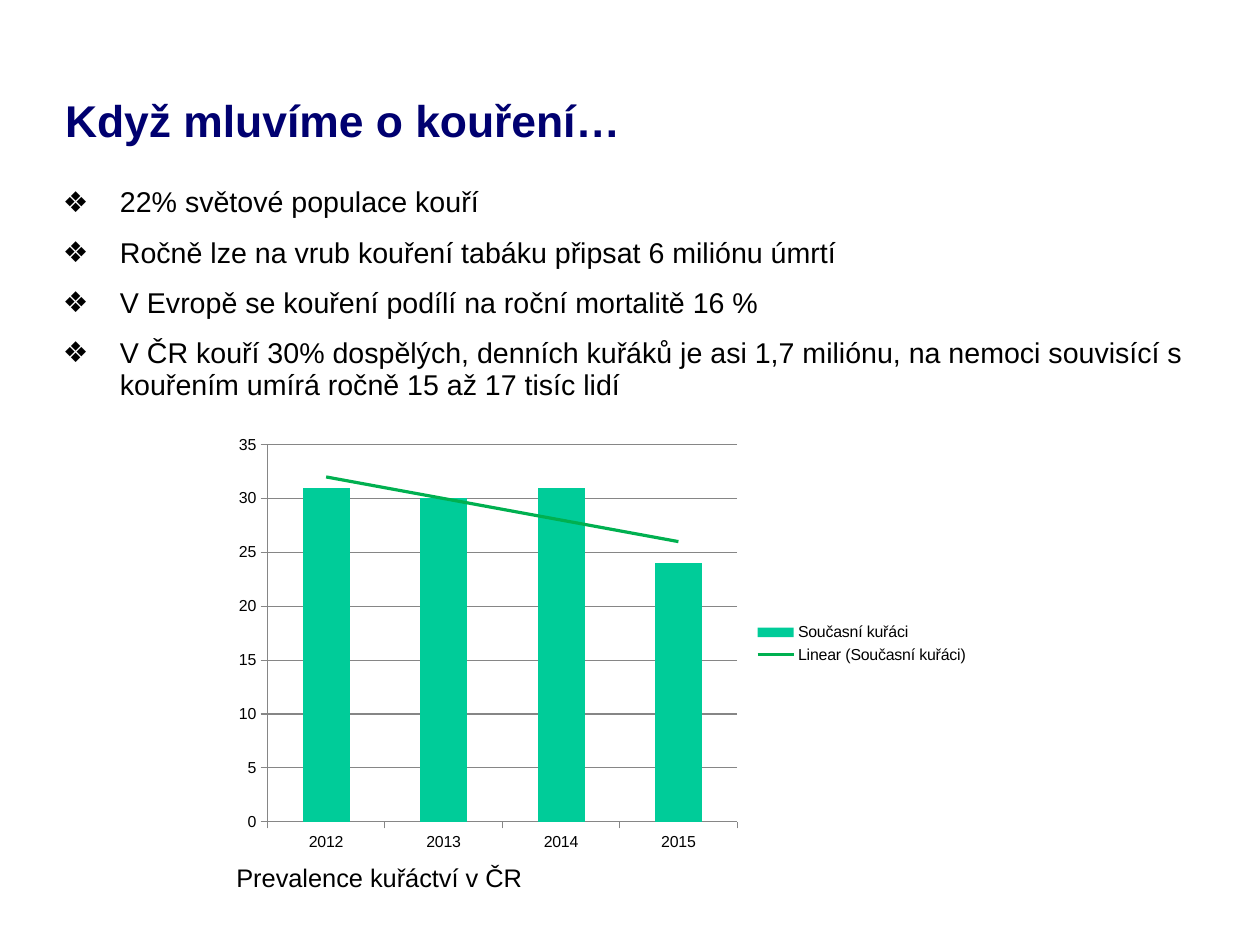
from dataclasses import dataclass

import lxml.etree
import pptx
import pptx.chart.data
import pptx.dml.color
import pptx.enum.chart
import pptx.enum.text
import pptx.oxml
import pptx.oxml.ns
import pptx.util

Inches = pptx.util.Inches
Pt = pptx.util.Pt
qn = pptx.oxml.ns.qn

POINTS_PER_INCH = 72
COLORS = {
    "title": "000070",
    "text": "000000",
    "bars": "00CC99",
    "trend": "00B050",
    "lines": "868686",
}
FONT = "Arial"
SERIES_NAME = "Současní kuřáci"
SMOKERS = {"2012": 31, "2013": 30, "2014": 31, "2015": 24}
CHART_BOX = (1.97, 3.74, 6.61, 3.78)
PLOT_BOX = (0.37, 0.15, 4.11, 3.3)


@dataclass
class TextBlock:
    box: tuple[float, float, float, float]
    lines: list[str]
    size: int
    color: str = "text"
    bold: bool = False
    bullet: str = ""
    space_after: float = 0
    anchor: pptx.enum.text.MSO_ANCHOR = pptx.enum.text.MSO_ANCHOR.TOP
    insets: tuple[float, float, float, float] = (0, 0, 0, 0)


TEXT_BLOCKS = [
    TextBlock((0.57, 0.31, 7.44, 0.98), ["Když mluvíme o kouření…"], 28, "title",
              bold=True, anchor=pptx.enum.text.MSO_ANCHOR.BOTTOM),
    TextBlock((0.55, 1.61, 9.84, 5.42), [
        "22% světové populace kouří",
        "Ročně lze na vrub kouření tabáku připsat 6 miliónu úmrtí",
        "V Evropě se kouření podílí na roční mortalitě 16 %",
        "V ČR kouří 30% dospělých, denních kuřáků je asi 1,7 miliónu, "
        "na nemoci souvisící s kouřením umírá ročně 15 až 17 tisíc lidí",
    ], 18, bullet="❖", space_after=11.5, insets=(0, 0.03, 0, 0)),
    TextBlock((1.97, 7.52, 6.54, 0.35), ["Prevalence kuřáctví v ČR"], 16,
              insets=(0.1, 0.05, 0.1, 0.05)),
]


def rgb(name: str) -> pptx.dml.color.RGBColor:
    return pptx.dml.color.RGBColor.from_string(COLORS[name])


def add_bullet(paragraph, symbol: str) -> None:
    properties = paragraph._p.get_or_add_pPr()
    properties.set("marL", str(Inches(0.5)))
    properties.set("indent", str(-Inches(0.5)))
    color = lxml.etree.SubElement(properties, qn("a:buClr"))
    lxml.etree.SubElement(color, qn("a:srgbClr"), val=COLORS["text"])
    lxml.etree.SubElement(properties, qn("a:buFont"), typeface=FONT)
    lxml.etree.SubElement(properties, qn("a:buChar"), char=symbol)


def add_text(slide, block: TextBlock) -> None:
    frame = slide.shapes.add_textbox(*map(Inches, block.box)).text_frame
    frame.word_wrap = True
    frame.vertical_anchor = block.anchor
    (frame.margin_left, frame.margin_top,
     frame.margin_right, frame.margin_bottom) = map(Inches, block.insets)
    frame.text = "\n".join(block.lines)
    for paragraph in frame.paragraphs:
        if block.bullet:
            add_bullet(paragraph, block.bullet)
        paragraph.line_spacing = 0.93
        paragraph.space_after = Pt(block.space_after)
        font = paragraph.font
        font.name, font.size, font.bold = FONT, Pt(block.size), block.bold
        font.color.rgb = rgb(block.color)


def add_trendline(series) -> None:
    trendline = pptx.oxml.parse_xml(
        f'<c:trendline {pptx.oxml.ns.nsdecls("c", "a")}>'
        f'<c:name>Linear ({SERIES_NAME})</c:name>'
        f'<c:spPr><a:ln w="{Pt(2)}"><a:solidFill>'
        f'<a:srgbClr val="{COLORS["trend"]}"/></a:solidFill></a:ln></c:spPr>'
        '<c:trendlineType val="linear"/><c:dispRSqr val="0"/><c:dispEq val="0"/>'
        '</c:trendline>')
    series._element.find(qn("c:cat")).addprevious(trendline)


def place_plot(chart) -> None:
    """Fix the inner plot area, as fractions of the chart."""
    plot_area = chart._chartSpace.chart.plotArea
    for old_layout in plot_area.findall(qn("c:layout")):
        plot_area.remove(old_layout)
    layout = lxml.etree.Element(qn("c:layout"))
    manual = lxml.etree.SubElement(layout, qn("c:manualLayout"))
    settings = {"layoutTarget": "inner", "xMode": "edge", "yMode": "edge"}
    chart_size = CHART_BOX[2:] * 2
    for tag, length, whole in zip("xywh", PLOT_BOX, chart_size):
        settings[tag] = length / whole
    for tag, value in settings.items():
        lxml.etree.SubElement(manual, qn(f"c:{tag}"), val=str(value))
    plot_area.insert(0, layout)


def add_smoking_chart(slide) -> None:
    data = pptx.chart.data.CategoryChartData()
    data.categories = list(SMOKERS)
    data.add_series(SERIES_NAME, list(SMOKERS.values()))
    chart = slide.shapes.add_chart(
        pptx.enum.chart.XL_CHART_TYPE.COLUMN_CLUSTERED,
        *map(Inches, CHART_BOX), data).chart
    chart.has_title = False
    chart.font.name, chart.font.size = FONT, Pt(10)
    chart.font.color.rgb = rgb("text")
    chart.has_legend = True
    chart.legend.position = pptx.enum.chart.XL_LEGEND_POSITION.RIGHT
    chart.legend.include_in_layout = False

    plot = chart.plots[0]
    plot.gap_width = 150
    plot.vary_by_categories = False
    series = plot.series[0]
    series.format.fill.solid()
    series.format.fill.fore_color.rgb = rgb("bars")
    add_trendline(series)

    value_axis = chart.value_axis
    value_axis.minimum_scale, value_axis.maximum_scale = 0, 35
    value_axis.major_unit = 5
    value_axis.has_major_gridlines = True
    for axis in (chart.category_axis, value_axis):
        axis.major_tick_mark = pptx.enum.chart.XL_TICK_MARK.OUTSIDE
    for item in (chart.category_axis, value_axis, value_axis.major_gridlines):
        item.format.line.color.rgb = rgb("lines")
        item.format.line.width = Pt(0.75)
    place_plot(chart)


def main() -> None:
    presentation = pptx.Presentation()
    presentation.slide_width = Inches(793.75 / POINTS_PER_INCH)
    presentation.slide_height = Inches(595.25 / POINTS_PER_INCH)
    slide = presentation.slides.add_slide(presentation.slide_layouts[6])
    for block in TEXT_BLOCKS:
        add_text(slide, block)
    add_smoking_chart(slide)
    presentation.save("out.pptx")


if __name__ == "__main__":
    main()
